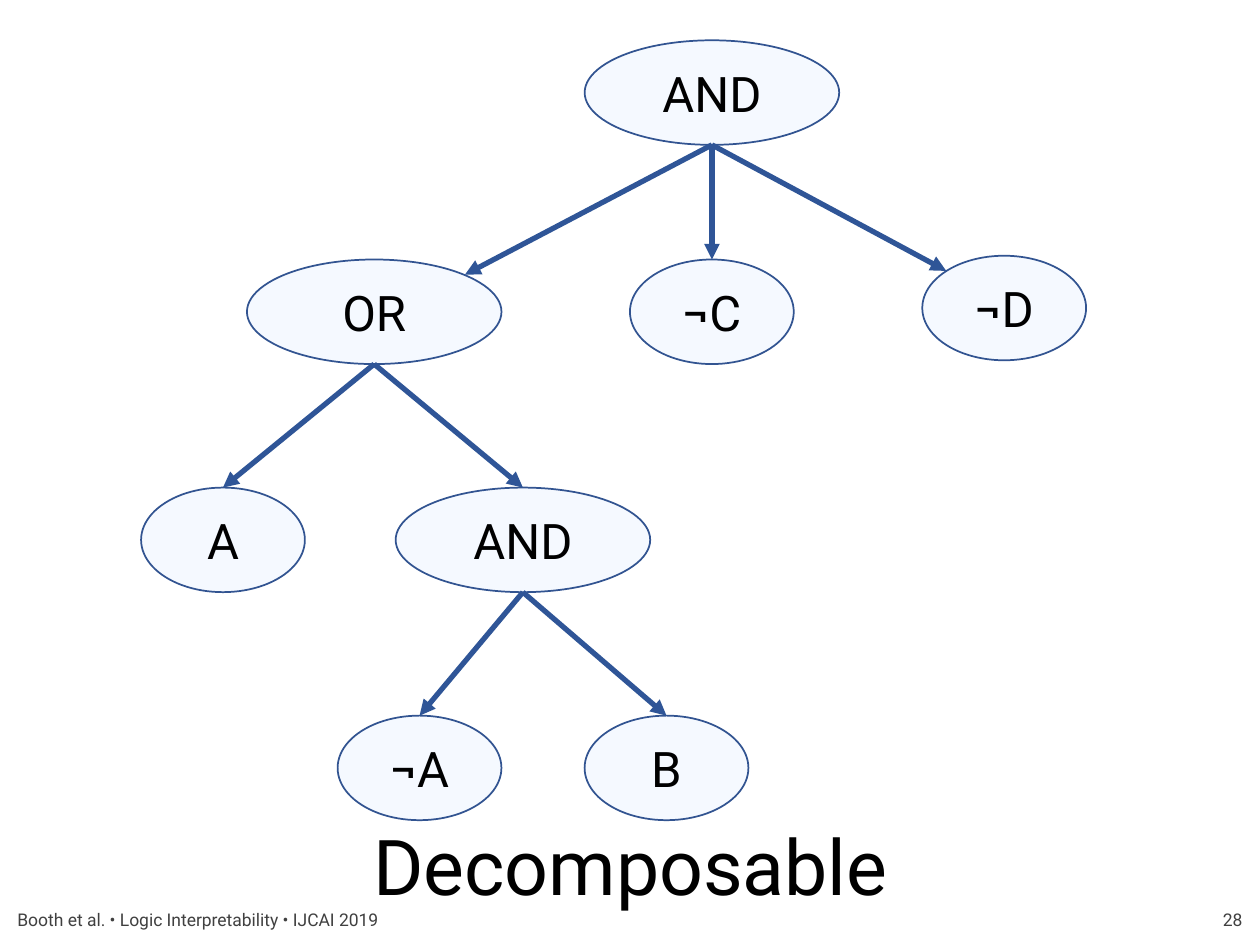
from pptx import Presentation
from pptx.dml.color import RGBColor
from pptx.enum import shapes, text
from pptx.oxml.ns import qn
from pptx.util import Inches, Pt
from lxml import etree

BLACK = RGBColor(0, 0, 0)
GRAY = RGBColor(0x40, 0x40, 0x40)
PALE = RGBColor(0xD1, 0xE2, 0xFF)
EDGE = RGBColor(0x32, 0x54, 0x91)
BLUE = RGBColor(0x2F, 0x55, 0x97)

WIDE, SLIM, HIGH = 2.02, 1.3, 0.83

NODES = {
    "root": ("AND", 4.64, 0.32, WIDE),
    "or": ("OR", 1.96, 2.06, WIDE),
    "and": ("AND", 3.14, 3.87, WIDE),
    "a": ("A", 1.12, 3.87, SLIM),
    "not a": ("¬A", 2.68, 5.68, SLIM),
    "b": ("B", 4.64, 5.68, SLIM),
    "not c": ("¬C", 5, 2.06, SLIM),
    "not d": ("¬D", 7.32, 2.03, SLIM),
}

LINKS = [
    ("root", "not d", (7.51, 2.15)),
    ("root", "not c", None),
    ("root", "or", (3.69, 2.18)),
    ("or", "and", None),
    ("or", "a", None),
    ("and", "b", None),
    ("and", "not a", None),
]


def write(shape, words, size, color, align, anchor):
    frame = shape.text_frame
    frame.text = words
    frame.word_wrap = True
    frame.auto_size = text.MSO_AUTO_SIZE.NONE
    frame.vertical_anchor = anchor
    para = frame.paragraphs[0]
    para.alignment = align
    para.font.name = "Roboto"
    para.font.size = Pt(size)
    para.font.color.rgb = color


def add_title(slide, words):
    title = slide.shapes.title
    title.left, title.top = Inches(2.6), Inches(6.45)
    title.width, title.height = Inches(4.81), Inches(0.84)
    write(title, words, 44, BLACK, text.PP_ALIGN.CENTER, text.MSO_ANCHOR.TOP)


def add_note(slide, words, left, width, align):
    box = slide.shapes.add_textbox(
        Inches(left), Inches(7.1), Inches(width), Inches(0.4))
    write(box, words, 10, GRAY, align, text.MSO_ANCHOR.MIDDLE)


def add_node(slide, words, left, top, width):
    node = slide.shapes.add_shape(
        shapes.MSO_SHAPE.OVAL,
        Inches(left), Inches(top), Inches(width), Inches(HIGH))
    node.shadow.inherit = False
    node.fill.solid()
    node.fill.fore_color.rgb = PALE
    tint = node.fill._xPr.find(qn("a:solidFill"))[0]
    etree.SubElement(tint, qn("a:alpha"), val="20000")
    node.line.color.rgb = EDGE
    node.line.width = Pt(1)
    write(node, words, 28, BLACK,
          text.PP_ALIGN.CENTER, text.MSO_ANCHOR.MIDDLE)
    return node


def add_link(slide, parent, child, tip):
    x = parent.left + parent.width // 2
    y = parent.top + parent.height
    end = [Inches(v) for v in tip] if tip else (x, y)
    link = slide.shapes.add_connector(
        shapes.MSO_CONNECTOR.STRAIGHT, x, y, *end)
    if not tip:
        link.end_connect(child, 0)
    link.line.color.rgb = BLUE
    link.line.width = Pt(3)
    etree.SubElement(link.line._get_or_add_ln(), qn("a:tailEnd"),
                     type="triangle")
    etree.SubElement(link._element.spPr, qn("a:effectLst"))


def main():
    deck = Presentation()
    deck.slide_width, deck.slide_height = Inches(10), Inches(7.5)
    slide = deck.slides.add_slide(deck.slide_layouts[5])
    add_note(slide, "Booth et al. • Logic Interpretability • IJCAI 2019",
             0.04, 3.86, text.PP_ALIGN.LEFT)
    add_note(slide, "28", 9.39, 0.57, text.PP_ALIGN.RIGHT)
    add_title(slide, "Decomposable")
    nodes = {key: add_node(slide, *node) for key, node in NODES.items()}
    for parent, child, tip in LINKS:
        add_link(slide, nodes[parent], nodes[child], tip)
    deck.save("out.pptx")


if __name__ == "__main__":
    main()
